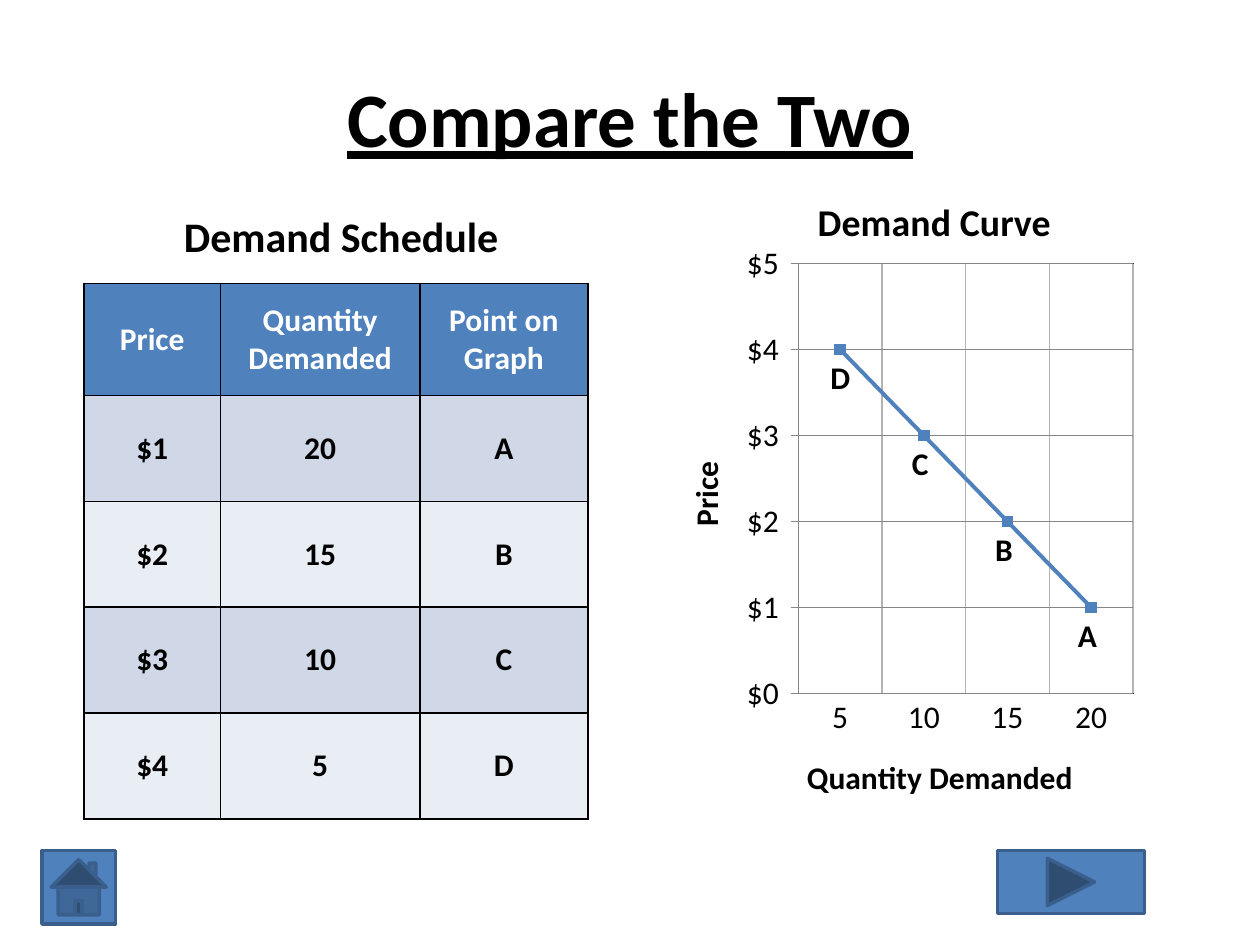
from dataclasses import dataclass

from lxml.etree import SubElement
from pptx import Presentation
from pptx.chart.data import CategoryChartData
from pptx.dml.color import RGBColor
from pptx.enum.chart import XL_CHART_TYPE as ChartType
from pptx.enum.chart import XL_LABEL_POSITION as LabelPosition
from pptx.enum.chart import XL_MARKER_STYLE as MarkerStyle
from pptx.enum.chart import XL_TICK_MARK as TickMark
from pptx.enum.shapes import MSO_SHAPE as Shape
from pptx.enum.text import MSO_ANCHOR as Anchor
from pptx.enum.text import PP_ALIGN as Align
from pptx.oxml import parse_xml
from pptx.oxml.ns import nsdecls, qn
from pptx.slide import Slide
from pptx.util import Inches, Pt

BLACK = RGBColor(0x00, 0x00, 0x00)
WHITE = RGBColor(0xFF, 0xFF, 0xFF)
BLUE = RGBColor(0x4F, 0x81, 0xBD)
DARK_BLUE = RGBColor(0x3A, 0x5F, 0x8C)
BAND_DARK = RGBColor(0xD0, 0xD8, 0xE8)
BAND_LIGHT = RGBColor(0xE9, 0xED, 0xF4)
AXIS_GRAY = RGBColor(0x86, 0x86, 0x86)
GRID_GRAY = RGBColor(0xB3, 0xB3, 0xB3)

SCHEDULE = [
    ("Price", "Quantity Demanded", "Point on Graph"),
    ("$1", "20", "A"),
    ("$2", "15", "B"),
    ("$3", "10", "C"),
    ("$4", "5", "D"),
]
CURVE = {"5": (4, "D"), "10": (3, "C "), "15": (2, "B "), "20": (1, "A ")}


def grid(*units):
    """Convert grid units, 120 columns by 90 rows on the slide, to lengths."""
    return [Inches(unit / 12) for unit in units]


def style_font(font, size=18, color=BLACK, bold=True, underline=None):
    """Apply the slide's typeface and the given format to a font."""
    font.name = "Calibri"
    font.size = Pt(size)
    font.bold = bold
    font.underline = underline
    font.color.rgb = color


def write_text(frame, text, align=Align.CENTER, **style):
    """Fill a text frame with one formatted paragraph."""
    paragraph = frame.paragraphs[0]
    paragraph.alignment = align
    run = paragraph.add_run()
    run.text = text
    style_font(run.font, **style)


def style_line(line, color, width):
    """Give a line a solid colour and a width in points."""
    line.color.rgb = color
    line.width = Pt(width)


def add_cell_borders(cell, color, width):
    """Draw all four borders of a table cell."""
    properties = cell._tc.get_or_add_tcPr()
    for side in ("lnL", "lnR", "lnT", "lnB"):
        border = SubElement(properties, qn(f"a:{side}"), w=str(Pt(width)))
        fill = SubElement(border, qn("a:solidFill"))
        SubElement(fill, qn("a:srgbClr"), val=str(color))


@dataclass
class SlideBuilder:
    """Hold the style and the current slide."""

    slide: Slide
    accent: RGBColor = BLUE
    outline: RGBColor = DARK_BLUE

    def text(self, text, area, anchor, **style):
        """Add a text box."""
        frame = self.slide.shapes.add_textbox(*grid(*area)).text_frame
        frame.word_wrap = True
        frame.vertical_anchor = anchor
        write_text(frame, text, **style)

    def table(self, rows, area, column_widths, row_heights):
        """Add a bordered table with a header and banded rows."""
        table = self.slide.shapes.add_table(
            len(rows), len(column_widths), *grid(*area)
        ).table
        for column, width in zip(table.columns, grid(*column_widths)):
            column.width = width
        for row, height in zip(table.rows, grid(*row_heights)):
            row.height = height
        for row_index, values in enumerate(rows):
            band = BAND_DARK if row_index % 2 else BAND_LIGHT
            for column_index, value in enumerate(values):
                cell = table.cell(row_index, column_index)
                cell.vertical_anchor = Anchor.MIDDLE
                add_cell_borders(cell, BLACK, 1)
                cell.fill.solid()
                cell.fill.fore_color.rgb = band if row_index else self.accent
                write_text(cell.text_frame, value, color=BLACK if row_index else WHITE)

    def line_chart(self, points, area, title, category_title, value_title, plot):
        """Add a line chart with a named label below each point."""
        data = CategoryChartData()
        data.categories = list(points)
        data.add_series("Series 1", [value for value, _ in points.values()])
        chart = self.slide.shapes.add_chart(
            ChartType.LINE_MARKERS, *grid(*area), data
        ).chart
        style_font(chart.font, bold=False)
        chart.has_legend = False
        chart.has_title = True
        write_text(chart.chart_title.text_frame, title, size=21.6)

        category_axis, value_axis = chart.category_axis, chart.value_axis
        axes = (
            (category_axis, category_title, GRID_GRAY, TickMark.NONE),
            (value_axis, value_title, AXIS_GRAY, TickMark.CROSS),
        )
        for axis, axis_title, grid_color, tick in axes:
            write_text(axis.axis_title.text_frame, axis_title)
            axis.has_major_gridlines = True
            style_line(axis.major_gridlines.format.line, grid_color, 0.75)
            style_line(axis.format.line, AXIS_GRAY, 0.75)
            axis.major_tick_mark = tick
        value_axis.minimum_scale, value_axis.maximum_scale = 0, 5
        value_axis.major_unit = 1
        value_axis.tick_labels.number_format = '"$"#,##0_);[Red]\\("$"#,##0\\)'
        value_axis.tick_labels.number_format_is_linked = False

        chart.plots[0].vary_by_categories = False
        series = chart.plots[0].series[0]
        series.smooth = False
        style_line(series.format.line, self.accent, 2.25)
        series.marker.style = MarkerStyle.SQUARE
        series.marker.size = 6
        series.marker.format.fill.solid()
        series.marker.format.fill.fore_color.rgb = self.accent
        style_line(series.marker.format.line, self.accent, 0.75)
        for index, (_, name) in enumerate(points.values()):
            label = series.points[index].data_label
            write_text(label.text_frame, name)
            label.position = LabelPosition.BELOW
        self.place_plot(chart, plot)

    def place_plot(self, chart, plot):
        """Fix the inner plot area by shares of the chart and outline it."""
        plot_area = chart._chartSpace.chart.plotArea
        for layout in plot_area.findall(qn("c:layout")):
            plot_area.remove(layout)
        shares = "".join(
            f'<c:{name} val="{share}"/>' for name, share in zip("xywh", plot)
        )
        plot_area.insert(0, parse_xml(
            f'<c:layout {nsdecls("c")}><c:manualLayout><c:layoutTarget val="inner"/>'
            f'<c:xMode val="edge"/><c:yMode val="edge"/>{shares}'
            "</c:manualLayout></c:layout>"
        ))
        plot_area.append(parse_xml(
            f'<c:spPr {nsdecls("c", "a")}><a:noFill/><a:ln w="{Pt(0.75)}">'
            f'<a:solidFill><a:srgbClr val="{BLACK}"/></a:solidFill></a:ln></c:spPr>'
        ))

    def button(self, kind, area):
        """Add an action button."""
        shape = self.slide.shapes.add_shape(kind, *grid(*area))
        shape.shadow.inherit = False
        shape.fill.solid()
        shape.fill.fore_color.rgb = self.accent
        style_line(shape.line, self.outline, 2)


def main():
    """Build the slide that compares the demand schedule and curve."""
    presentation = Presentation()
    presentation.slide_width, presentation.slide_height = grid(120, 90)
    builder = SlideBuilder(presentation.slides.add_slide(presentation.slide_layouts[6]))
    builder.text("Compare the Two", (6, 3.6, 108, 15), Anchor.MIDDLE, size=44, underline=True)
    builder.text("Demand Schedule", (6, 17, 53, 8.4), Anchor.BOTTOM, size=24)
    builder.line_chart(
        CURVE, (62, 16, 54, 65), "Demand Curve", "Quantity Demanded", "Price ",
        plot=(0.26, 0.14, 0.59, 0.63),
    )
    builder.table(SCHEDULE, (8, 27, 48, 51), (13, 19, 16), [10.68] + [10.08] * 4)
    builder.button(Shape.ACTION_BUTTON_HOME, (4, 81, 7, 7))
    builder.button(Shape.ACTION_BUTTON_FORWARD_OR_NEXT, (95, 81, 14, 6))
    presentation.save("out.pptx")


if __name__ == "__main__":
    main()
